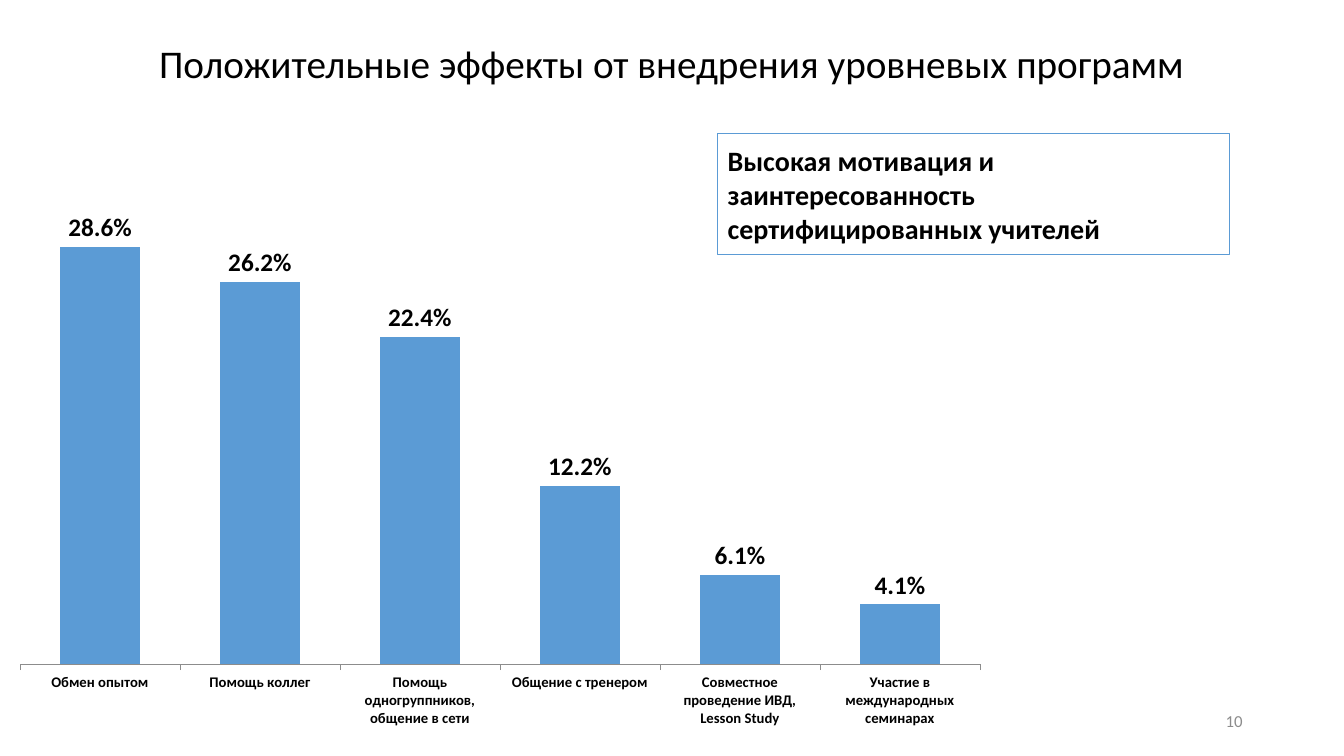
from pptx import Presentation
from pptx.chart.data import CategoryChartData
from pptx.dml.color import RGBColor as RGB
from pptx.enum.chart import XL_CHART_TYPE as CT, XL_LABEL_POSITION as LP, XL_TICK_MARK as TM
from pptx.enum.shapes import MSO_SHAPE as SHAPE
from pptx.enum.text import MSO_ANCHOR as ANCHOR, PP_ALIGN as AL
from pptx.oxml import parse_xml
from pptx.oxml.ns import nsdecls, qn
from pptx.util import Inches, Pt

W, H = Inches(13.33), Inches(7.5)
FONT = "Calibri"
COLORS = {"text": "000000", "bar": "5B9BD5", "paper": "FFFFFF", "muted": "8C8C8C"}
EFFECTS = {
    "Обмен опытом": 0.286,
    "Помощь коллег": 0.262,
    "Помощь одногруппников, общение в сети": 0.224,
    "Общение с тренером": 0.122,
    "Совместное проведение ИВД, Lesson Study": 0.061,
    "Участие в международных семинарах": 0.041,
}
PLOT_AREA = {"x": 0.02, "y": 0.02, "w": 0.96, "h": 0.85}


def color(name):
    return RGB.from_string(COLORS[name])


def box(x, y, w, h):
    """Turn shares of the slide's size into lengths."""
    return int(x * W), int(y * H), int(w * W), int(h * H)


def set_font(font, size, tint="text", bold=False):
    font.name, font.size, font.bold = FONT, Pt(size), bold
    font.color.rgb = color(tint)


def write(s, text, size, tint="text", bold=False, align=AL.LEFT, anchor=ANCHOR.MIDDLE):
    tf = s.text_frame
    tf.word_wrap = True
    tf.vertical_anchor = anchor
    p = tf.paragraphs[0]
    p.alignment = align
    r = p.add_run()
    r.text = text
    set_font(r.font, size, tint, bold)


def add_text(slide, area, text, **fmt):
    write(slide.shapes.add_textbox(*box(*area)), text, **fmt)


def add_callout(slide, area, text, **fmt):
    s = slide.shapes.add_shape(SHAPE.RECTANGLE, *box(*area))
    s.shadow.inherit = False
    s.fill.solid()
    s.fill.fore_color.rgb = color("paper")
    s.line.color.rgb = color("bar")
    s.line.width = Pt(1)
    write(s, text, **fmt)


def place_plot(chart):
    plot_area = chart.element.find(".//" + qn("c:plotArea"))
    for old in plot_area.findall(qn("c:layout")):
        plot_area.remove(old)
    modes = "".join(f'<c:{k}Mode val="edge"/>' for k in "xy")
    sizes = "".join(f'<c:{k} val="{v}"/>' for k, v in PLOT_AREA.items())
    plot_area.insert(0, parse_xml(
        f'<c:layout {nsdecls("c")}><c:manualLayout><c:layoutTarget val="inner"/>'
        f'{modes}{sizes}</c:manualLayout></c:layout>'))


def add_columns(slide, area, values):
    data = CategoryChartData(number_format="0.0%")
    data.categories = list(values)
    data.add_series("Series 1", list(values.values()))
    chart = slide.shapes.add_chart(CT.COLUMN_CLUSTERED, *box(*area), data).chart
    chart.has_legend = chart.has_title = False
    set_font(chart.font, 10)

    plot = chart.plots[0]
    plot.vary_by_categories = False
    plot.gap_width = 100
    fill = plot.series[0].format.fill
    fill.solid()
    fill.fore_color.rgb = color("bar")

    plot.has_data_labels = True
    labels = plot.data_labels
    labels.show_value = True
    labels.position = LP.OUTSIDE_END
    labels.number_format, labels.number_format_is_linked = "0.0%", False
    set_font(labels.font, 18, bold=True)

    axis = chart.category_axis
    axis.major_tick_mark = TM.OUTSIDE
    axis.format.line.color.rgb = color("muted")
    axis.format.line.width = Pt(0.5)
    set_font(axis.tick_labels.font, 10.5, bold=True)

    scale = chart.value_axis
    scale.minimum_scale, scale.maximum_scale = 0, 0.35
    scale.has_major_gridlines = False
    scale.visible = False
    place_plot(chart)


def main():
    prs = Presentation()
    prs.slide_width, prs.slide_height = W, H
    slide = prs.slides.add_slide(prs.slide_layouts[6])
    add_columns(slide, (0, 0.187, 0.744, 0.795), EFFECTS)
    add_text(slide, (0.028, 0.045, 0.943, 0.076),
             "Положительные эффекты от внедрения уровневых программ",
             size=28, align=AL.CENTER, anchor=ANCHOR.TOP)
    add_callout(slide, (0.534, 0.177, 0.381, 0.16),
                "Высокая мотивация и заинтересованность сертифицированных учителей",
                size=20, bold=True)
    add_text(slide, (0.707, 0.927, 0.225, 0.053), "10",
             size=12, tint="muted", align=AL.RIGHT)
    prs.save("out.pptx")


if __name__ == "__main__":
    main()
